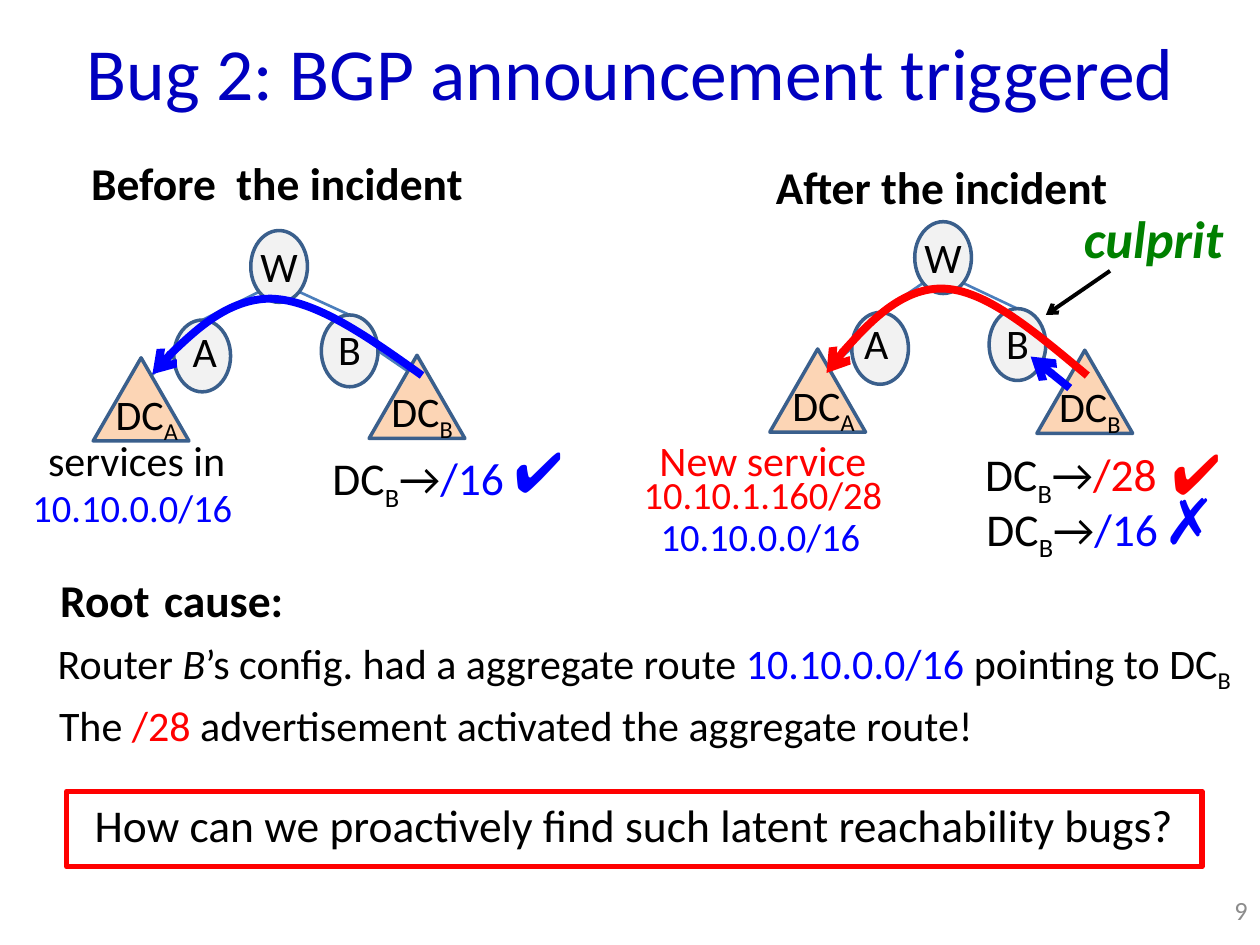
from dataclasses import dataclass
from math import sqrt

from lxml.etree import SubElement
from pptx import Presentation
from pptx.dml.color import RGBColor
from pptx.enum.shapes import MSO_CONNECTOR, MSO_SHAPE
from pptx.enum.text import MSO_ANCHOR, PP_ALIGN
from pptx.oxml.ns import qn
from pptx.util import Cm, Pt

BLACK, BLUE, RED, GREEN = "000000", "0000FF", "FF0000", "008000"
OUTLINE, LINK, ROUTER, CENTER = "3A5F8C", "4B7EBC", "F2F2F2", "FCD5B5"
NODE_W, NODE_H = 0.45, 0.57
DC_W, DC_H = 0.76, 0.66
Point = tuple[float, float]


@dataclass
class Run:
    text: str
    color: str = BLACK
    size: float | None = None
    bold: bool = False
    italic: bool = False
    sub: bool = False
    font: str = "Calibri"


@dataclass
class Tree:
    """Top left corners of the nodes, and the control points of the traffic curve."""
    w: Point
    a: Point
    b: Point
    dc_a: Point
    dc_b: Point
    a_label_dx: float
    color: str
    curve: list[Point]


def cm(inches: float) -> Cm:
    return Cm(inches * 2.54)


def rgb(color: str) -> RGBColor:
    return RGBColor.from_string(color)


def write(sp, paragraphs: list[list[Run]], size: float, align=PP_ALIGN.CENTER,
          spacing: float = 1.0, before: float = 0, anchor=MSO_ANCHOR.TOP) -> None:
    tf = sp.text_frame
    tf.word_wrap = True
    tf.vertical_anchor = anchor
    for i, runs in enumerate(paragraphs):
        p = tf.add_paragraph() if i else tf.paragraphs[0]
        p.alignment, p.line_spacing, p.space_before = align, spacing, Pt(before)
        for run in runs:
            r = p.add_run()
            r.text = run.text
            r.font.name, r.font.size = run.font, Pt(run.size or size)
            r.font.bold, r.font.italic = run.bold, run.italic
            r.font.color.rgb = rgb(run.color)
            if run.sub:
                r._r.get_or_add_rPr().set("baseline", "-25000")


def text(s, at: tuple, *paragraphs: list[Run], size: float = 24, **style) -> None:
    write(s.shapes.add_textbox(*map(cm, at)), list(paragraphs), size, **style)


def shape(s, kind, at: tuple, fill: str | None, line: str, width: float):
    sp = s.shapes.add_shape(kind, *map(cm, at))
    sp.shadow.inherit = False
    if fill:
        sp.fill.solid()
        sp.fill.fore_color.rgb = rgb(fill)
    else:
        sp.fill.background()
    sp.line.color.rgb, sp.line.width = rgb(line), Pt(width)
    return sp


def add_arrowhead(sp) -> None:
    SubElement(sp.line._get_or_add_ln(), qn("a:tailEnd"), type="arrow")


def line(s, start: Point, end: Point, color: str = LINK, width: float = 1.5,
         arrow: bool = False) -> None:
    sp = s.shapes.add_connector(MSO_CONNECTOR.STRAIGHT, *map(cm, start + end))
    sp.line.color.rgb, sp.line.width = rgb(color), Pt(width)
    if arrow:
        add_arrowhead(sp)
    SubElement(sp._element.spPr, qn("a:effectLst"))


def curve_arrow(s, points: list[Point], color: str) -> None:
    """Draw an arrow along cubic Béziers: a start, then three points per piece."""
    emu = [(cm(x), cm(y)) for x, y in points]
    builder = s.shapes.build_freeform(*emu[0])
    builder.add_line_segments(emu[1:], close=False)
    sp = builder.convert_to_shape()
    sp.shadow.inherit = False
    sp.fill.background()
    sp.line.color.rgb, sp.line.width = rgb(color), Pt(4.5)
    add_arrowhead(sp)
    steps = list(sp._element.iter(qn("a:lnTo")))
    outline = steps[0].getparent()
    for i in range(0, len(steps), 3):
        bezier = SubElement(outline, qn("a:cubicBezTo"))
        for step in steps[i:i + 3]:
            bezier.append(step[0])
            outline.remove(step)


def draw_tree(s, t: Tree) -> None:
    half_w, half_h = NODE_W / 2, NODE_H / 2
    wx, wy = t.w[0] + half_w, t.w[1] + half_h
    dx, dy = half_w / sqrt(2), half_h / sqrt(2)
    line(s, (t.a[0] + half_w, t.a[1]), (wx - dx, wy + dy))
    line(s, (wx + dx, wy + dy), (t.b[0] + half_w, t.b[1]))
    line(s, (t.a[0], t.a[1] + half_h), (t.dc_a[0] + 0.22, t.dc_a[1] + 0.35))
    line(s, (t.b[0] + NODE_W, t.b[1] + half_h),
         (t.dc_b[0] + 0.4, t.dc_b[1] + 0.19))
    for x, y in (t.a, t.b, t.w):
        shape(s, MSO_SHAPE.OVAL, (x, y, NODE_W, NODE_H), ROUTER, OUTLINE, 2)
    for x, y in (t.dc_a, t.dc_b):
        shape(s, MSO_SHAPE.ISOSCELES_TRIANGLE, (x, y, DC_W, DC_H), CENTER, OUTLINE, 2)
    for name, (x, y), dx, dy in (("W", t.w, -0.07, 0.14),
                                 ("A", t.a, t.a_label_dx, 0.1),
                                 ("B", t.b, -0.07, 0.13)):
        text(s, (x + dx, y + dy, 0.59, 0.47), [Run(name)], spacing=0.7)
    for name, (x, y), dx, width in (("A", t.dc_a, -0.12, 1.09),
                                    ("B", t.dc_b, -0.11, 1.06)):
        text(s, (x + dx, y + 0.27, width, 0.47),
             [Run("DC"), Run(name, sub=True)], spacing=0.7)


def draw_route(s, at: tuple, prefix: str, color: str) -> None:
    text(s, at, [Run("DC"), Run("B", sub=True), Run("→"), Run(prefix, color)],
         size=26, spacing=0.8)


def draw_mark(s, x: float, y: float, mark: str, color: str, size: float) -> None:
    text(s, (x, y, 0.83, 0.8), [Run(mark, color, font="Arial")], size=size,
         anchor=MSO_ANCHOR.MIDDLE)


def main() -> None:
    prs = Presentation()
    prs.slide_width, prs.slide_height = cm(10), cm(7.5)
    s = prs.slides.add_slide(prs.slide_layouts[6])

    text(s, (0.38, 0.05, 9.25, 1.16),
         [Run("Bug 2: BGP announcement triggered", "0000BF")],
         size=42, spacing=0.8, anchor=MSO_ANCHOR.MIDDLE)
    for title, at in (("Before  the incident", (0.55, 1.3, 3.3, 0.43)),
                      ("After the incident", (6.05, 1.33, 2.85, 0.43))):
        text(s, at, [Run(title, bold=True)], size=26, spacing=0.7)

    trees = [
        Tree((1.99, 1.83), (1.38, 2.54), (2.55, 2.5), (0.74, 2.84), (2.93, 2.82),
             -0.05, BLUE, [(3.35, 2.98), (2.93, 2.68), (2.51, 2.38), (2.15, 2.37),
                           (1.8, 2.37), (1.26, 2.87), (1.21, 2.97)]),
        Tree((7.26, 1.76), (6.76, 2.48), (7.85, 2.45), (6.11, 2.77), (8.23, 2.78),
             -0.1, RED, [(8.63, 2.98), (8.22, 2.64), (7.82, 2.29), (7.47, 2.29),
                         (7.13, 2.29), (6.61, 2.85), (6.56, 2.96)]),
    ]
    for tree in trees:
        draw_tree(s, tree)
        curve_arrow(s, tree.curve, tree.color)

    aggregate = Run("10.10.0.0/16 ", BLUE, 22)
    text(s, (0.02, 3.54, 2.13, 0.79), [Run("services in")], [aggregate],
         spacing=0.6, before=10)
    text(s, (4.91, 3.51, 2.29, 0.79),
         [Run("New service ", RED), Run("10.10.1.160/28", RED, 22)],
         spacing=0.7, before=10)
    text(s, (4.96, 4.15, 2.22, 0.27), [aggregate], spacing=0.6, before=10)

    draw_route(s, (2.51, 3.57, 1.62, 0.47), "/16", BLUE)
    draw_route(s, (7.24, 3.54, 2.52, 0.47), "/28", RED)
    draw_route(s, (7.7, 3.97, 1.62, 0.47), "/16", BLUE)
    draw_mark(s, 3.86, 3.33, "✔", BLUE, 32)
    draw_mark(s, 9.08, 3.35, "✔", RED, 32)
    draw_mark(s, 9.03, 3.72, "✗", BLUE, 36)

    text(s, (8.43, 1.72, 1.45, 0.48), [Run("culprit", GREEN, bold=True, italic=True)],
         size=30, spacing=0.7)
    line(s, (8.81, 2.15), (8.3, 2.5), BLACK, 2.25, arrow=True)
    line(s, (8.49, 3.08), (8.18, 2.83), BLUE, 4.5, arrow=True)

    text(s, (0.38, 4.61, 1.97, 0.43), [Run("Root cause: ", bold=True)],
         size=26, spacing=0.7, align=PP_ALIGN.JUSTIFY)
    text(s, (0.36, 5.05, 9.74, 0.44),
         [Run("Router "), Run("B", italic=True),
          Run("’s config. had a aggregate route "), Run("10.10.0.0/16 ", BLUE),
          Run("pointing to DC"), Run("B", sub=True)],
         spacing=0.8, align=PP_ALIGN.LEFT)
    text(s, (0.37, 5.58, 8.92, 0.44),
         [Run("The "), Run("/28", RED),
          Run(" advertisement activated the aggregate route!")],
         spacing=0.8, align=PP_ALIGN.JUSTIFY)

    question = shape(s, MSO_SHAPE.RECTANGLE, (0.53, 6.28, 9.01, 0.6), None, RED, 3)
    write(question, [[Run("How can we proactively find such latent reachability bugs?")]], 26)
    text(s, (9.5, 6.95, 0.5, 0.55), [Run("9", "8C8C8C")], size=15,
         align=PP_ALIGN.RIGHT, anchor=MSO_ANCHOR.MIDDLE)

    prs.save("out.pptx")


if __name__ == "__main__":
    main()
